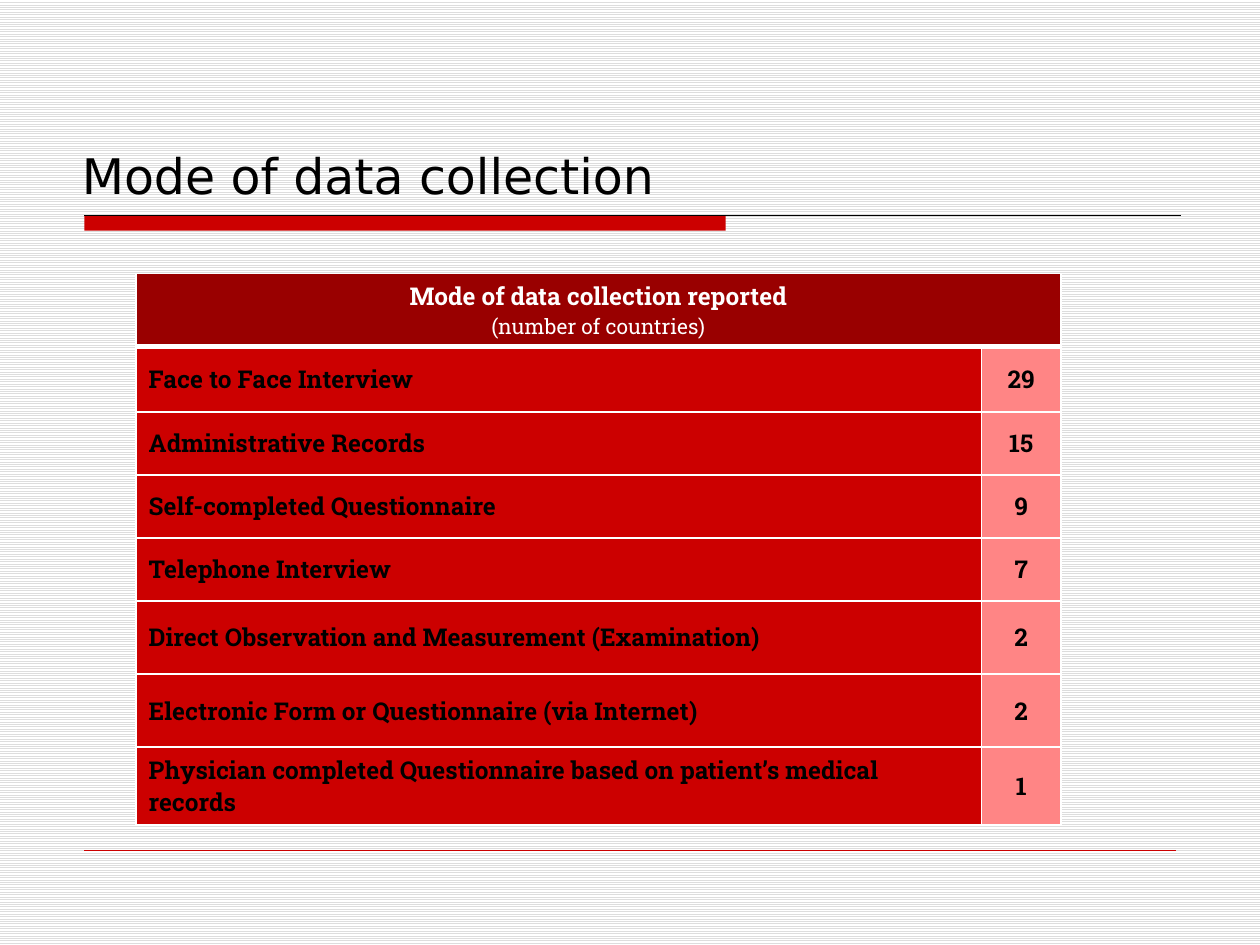
from lxml.etree import SubElement
from pptx import Presentation
from pptx.dml.color import RGBColor
from pptx.enum.dml import MSO_PATTERN
from pptx.enum.shapes import MSO_CONNECTOR, MSO_SHAPE
from pptx.enum.text import MSO_ANCHOR as Anchor, PP_ALIGN as Align
from pptx.oxml.ns import qn
from pptx.util import Inches, Pt

# Content
TITLE = "Mode of data collection"
HEADER = ("Mode of data collection reported", "(number of countries)")
MODES = [
    ("Face to Face Interview", 29),
    ("Administrative Records", 15),
    ("Self-completed Questionnaire", 9),
    ("Telephone Interview", 7),
    ("Direct Observation and Measurement (Examination)", 2),
    ("Electronic Form or Questionnaire (via Internet)", 2),
    ("Physician completed Questionnaire based on patient’s medical records", 1),
]

# Format
COLORS = {"black": "000000", "white": "FFFFFF", "stripe": "DDDDDD",
          "red": "CC0000", "dark red": "990000", "pink": "FF8585"}
TITLE_FONT, TABLE_FONT = "DejaVu Sans", "Roboto Slab"
COLUMNS = (6.71, 0.63)
ROWS = (0.57, 0.52) + (0.5,) * 3 + (0.58,) * 3
LEFT, RULE_TOP = 0.67, 1.71


def rgb(name):
    return RGBColor.from_string(COLORS[name])


def write(paragraph, text, *, size=14, font=TABLE_FONT, color="black",
          bold=True, align=Align.LEFT):
    paragraph.alignment = align
    run = paragraph.add_run()
    run.text = text
    run.font.name, run.font.size, run.font.bold = font, Pt(size), bold
    run.font.color.rgb = rgb(color)


def style_cell(cell, fill, bottom=1):
    """Give a cell white borders, a plain fill and middle anchoring."""
    cell.vertical_anchor = Anchor.MIDDLE
    props = cell._tc.get_or_add_tcPr()
    for side, width in (("L", 1), ("R", 1), ("T", 1), ("B", bottom)):
        border = SubElement(props, qn(f"a:ln{side}"), w=str(Pt(width)))
        solid = SubElement(border, qn("a:solidFill"))
        SubElement(solid, qn("a:srgbClr"), val=COLORS["white"])
    cell.fill.solid()
    cell.fill.fore_color.rgb = rgb(fill)


def add_rule(slide, right, y, color, width):
    rule = slide.shapes.add_connector(
        MSO_CONNECTOR.STRAIGHT, Inches(LEFT), Inches(y), Inches(right), Inches(y))
    rule.line.color.rgb = rgb(color)
    rule.line.width = Pt(width)
    SubElement(rule._element.spPr, qn("a:effectLst"))


def main():
    prs = Presentation()
    prs.slide_width, prs.slide_height = Inches(10), Inches(7.5)
    slide = prs.slides.add_slide(prs.slide_layouts[5])

    # Striped background
    stripes = slide.background.fill
    stripes.patterned()
    stripes.pattern = MSO_PATTERN.LIGHT_HORIZONTAL
    stripes.fore_color.rgb = rgb("stripe")
    stripes.back_color.rgb = rgb("white")

    # Red bar and thin rules
    bar = slide.shapes.add_shape(MSO_SHAPE.RECTANGLE, Inches(LEFT),
                                 Inches(RULE_TOP), Inches(5.09), Inches(0.12))
    bar.shadow.inherit = False
    bar.fill.solid()
    bar.fill.fore_color.rgb = rgb("red")
    bar.line.fill.background()
    add_rule(slide, 9.37, RULE_TOP, "black", 0.75)
    add_rule(slide, 9.33, 6.75, "red", 0.25)

    # Title
    title = slide.shapes.title
    title.left, title.top = Inches(-1.58), Inches(0.5)
    title.width, title.height = Inches(9), Inches(1.17)
    title.text_frame.vertical_anchor = Anchor.BOTTOM
    write(title.text_frame.paragraphs[0], TITLE, size=28, font=TITLE_FONT,
          bold=False, align=Align.CENTER)

    # Table grid
    table = slide.shapes.add_table(
        len(ROWS), len(COLUMNS), Inches(1.08), Inches(2.17),
        Inches(sum(COLUMNS)), Inches(sum(ROWS))).table
    table.horz_banding = False
    for column, width in zip(table.columns, COLUMNS):
        column.width = Inches(width)
    for row, height in zip(table.rows, ROWS):
        row.height = Inches(height)

    # Header across both columns
    header = table.cell(0, 0)
    header.merge(table.cell(0, 1))
    for cell in table.rows[0].cells:
        style_cell(cell, "dark red", bottom=3)
    heading, unit = HEADER
    write(header.text_frame.paragraphs[0], heading, color="white",
          align=Align.CENTER)
    write(header.text_frame.add_paragraph(), unit, size=12, color="white",
          bold=False, align=Align.CENTER)

    # One row per mode
    for row, (mode, countries) in enumerate(MODES, start=1):
        name, count = table.rows[row].cells
        style_cell(name, "red")
        style_cell(count, "pink")
        write(name.text_frame.paragraphs[0], mode)
        write(count.text_frame.paragraphs[0], str(countries), align=Align.CENTER)

    prs.save("out.pptx")


if __name__ == "__main__":
    main()
